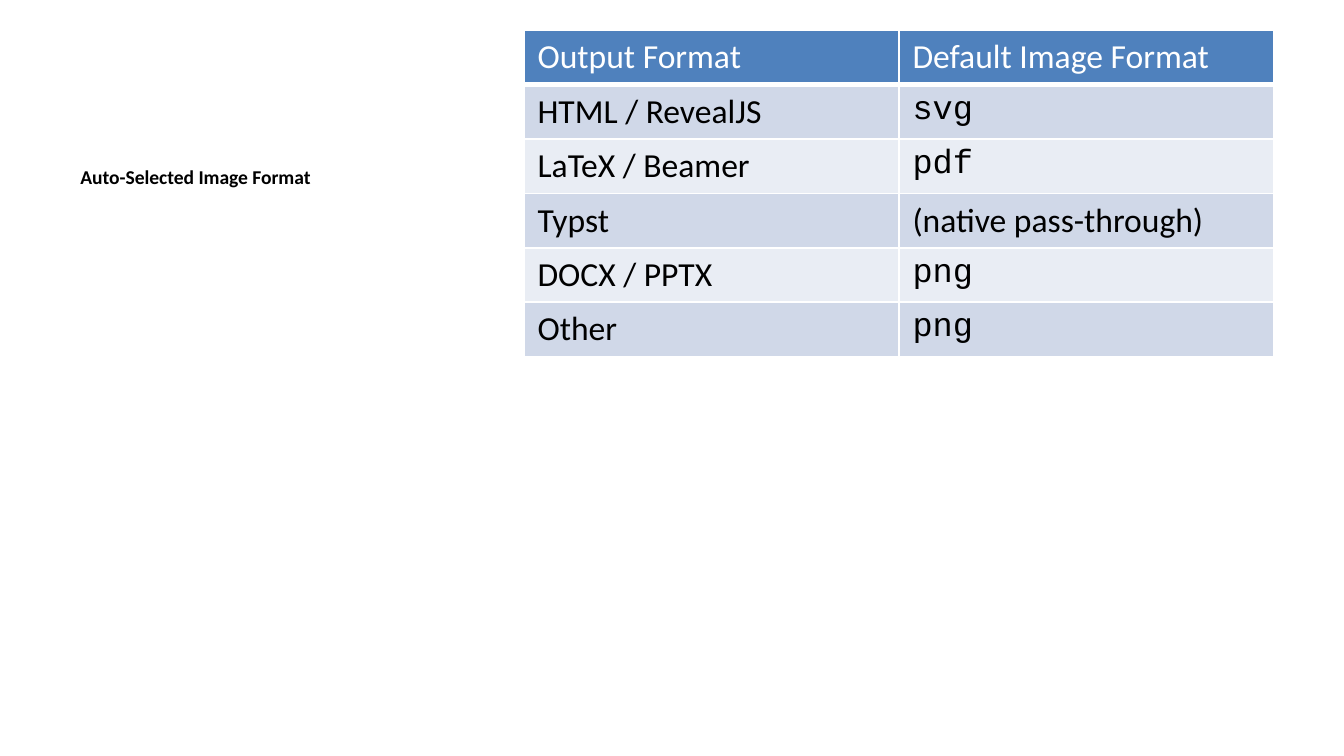
import pptx
import pptx.dml.color
import pptx.oxml
import pptx.oxml.ns
import pptx.util

PX = 4572  # EMU per px, 200 px to the inch
WHITE = pptx.dml.color.RGBColor(0xFF, 0xFF, 0xFF)
BLACK = pptx.dml.color.RGBColor(0x00, 0x00, 0x00)
HEADER_BLUE = pptx.dml.color.RGBColor(0x4F, 0x81, 0xBD)
DARK_BAND = pptx.dml.color.RGBColor(0xD0, 0xD8, 0xE8)
LIGHT_BAND = pptx.dml.color.RGBColor(0xE9, 0xED, 0xF4)


def write(frame, text, font="Calibri", size=18, color=BLACK, bold=False):
    span = frame.paragraphs[0].add_run()
    span.text = text
    span.font.name = font
    span.font.size = pptx.util.Pt(size)
    span.font.color.rgb = color
    span.font.bold = bold


def add_border(cell, side, points):
    cell._tc.get_or_add_tcPr().append(pptx.oxml.parse_xml(
        f'<a:{side} {pptx.oxml.ns.nsdecls("a")} w="{pptx.util.Pt(points)}">'
        f'<a:solidFill><a:srgbClr val="{WHITE}"/></a:solidFill></a:{side}>'))


deck = pptx.Presentation()
deck.slide_width = 2000 * PX
deck.slide_height = 1125 * PX
page = deck.slides.add_slide(deck.slide_layouts[6])

# Caption on the left
box = page.shapes.add_textbox(100 * PX, 236 * PX, 658 * PX, 770 * PX)
box.text_frame.word_wrap = True
write(box.text_frame, "Auto-Selected Image Format", size=10.5, bold=True)

# Table of formats on the right
rows = [
    ("Output Format", "Default Image Format"),
    ("HTML / RevealJS", "svg"),
    ("LaTeX / Beamer", "pdf"),
    ("Typst", "(native pass-through)"),
    ("DOCX / PPTX", "png"),
    ("Other", "png"),
]
code_words = {"svg", "pdf", "png"}
table = page.shapes.add_table(len(rows), 2, 780 * PX, 45 * PX,
                              2 * 558 * PX, len(rows) * 81 * PX).table
for row, texts in enumerate(rows):
    is_header = row == 0
    band = HEADER_BLUE if is_header else DARK_BAND if row % 2 else LIGHT_BAND
    for column, text in enumerate(texts):
        cell = table.cell(row, column)
        for side in ("lnL", "lnR", "lnT", "lnB"):
            add_border(cell, side, 3 if is_header and side == "lnB" else 1)
        cell.fill.solid()
        cell.fill.fore_color.rgb = band
        write(cell.text_frame, text,
              font="Courier New" if text in code_words else "Calibri",
              color=WHITE if is_header else BLACK)

deck.save("out.pptx")
